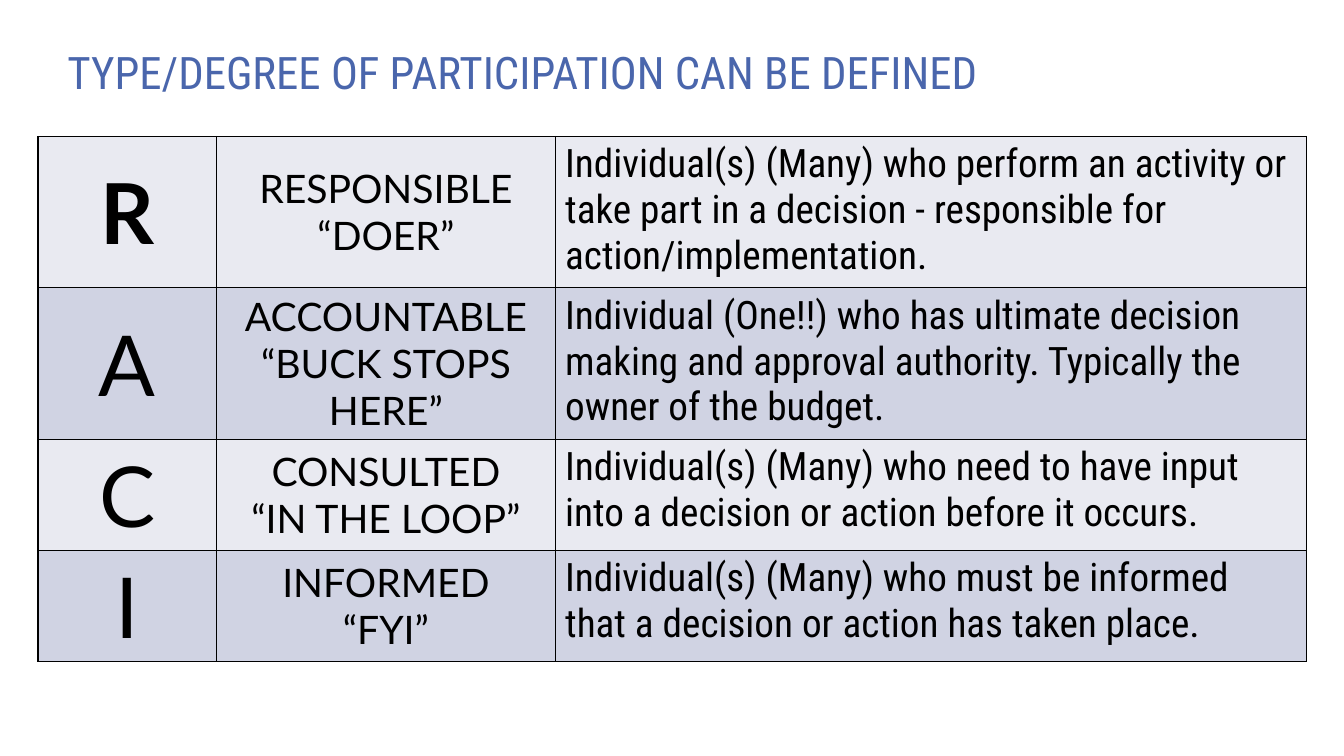
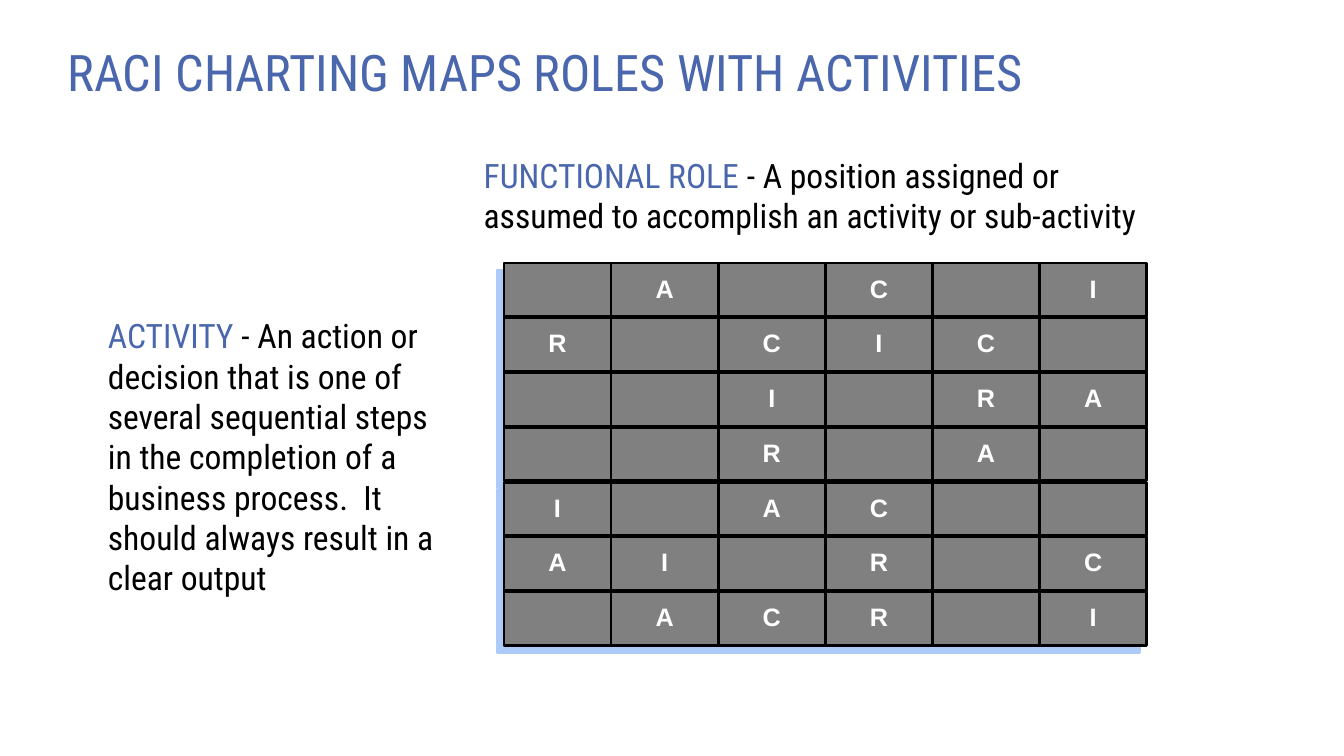
from lxml import etree
from pptx import Presentation
from pptx.dml.color import RGBColor
from pptx.enum.shapes import MSO_SHAPE as Shape
from pptx.enum.text import MSO_ANCHOR as Anchor, PP_ALIGN as Align
from pptx.oxml.ns import qn
from pptx.util import Cm, Pt

# Shared look
BLUE = RGBColor(0x4A, 0x66, 0xAC)
BLACK = RGBColor(0x00, 0x00, 0x00)
WHITE = RGBColor(0xFF, 0xFF, 0xFF)
GRAY = RGBColor(0x80, 0x80, 0x80)
SHADOW = RGBColor(0xAC, 0xCB, 0xF9)
BANDS = (RGBColor(0xE9, 0xEA, 0xF1), RGBColor(0xD0, 0xD3, 0xE3))
BODY_FONT = "Roboto Condensed"
LABEL_FONT = "Lato"
GRID_FONT = "Arial"

# Participation table: letter, role, meaning, row height in cm
PARTICIPATION = (
    ("R", "RESPONSIBLE\n“DOER”",
     "Individual(s) (Many) who perform an activity or take part in a decision"
     " - responsible for action/implementation.", 3.8),
    ("A", "ACCOUNTABLE\n“BUCK STOPS HERE”",
     "Individual (One!!) who has ultimate decision making and approval"
     " authority. Typically the owner of the budget.", 3.8),
    ("C", "CONSULTED\n“IN THE LOOP”",
     "Individual(s) (Many) who need to have input into a decision or action"
     " before it occurs.", 2.8),
    ("I", "INFORMED\n“FYI”",
     "Individual(s) (Many) who must be informed that a decision or action"
     " has taken place.", 2.8),
)
COLUMN_WIDTHS = (4.5, 8.53, 18.93)

# RACI grid: one string per activity, one letter per role, "." for none
RACI_ROWS = (".A.C.I", "R.CIC.", "..I.RA", "..R.A.", "I.AC..", "AI.R.C", ".ACR.I")
GRID_LEFT, GRID_TOP = 12.7, 6.63
COLUMN_STEP, ROW_STEP = 2.7, 1.38
CELL_HEIGHT = 1.35


def set_font(para, name, size, color, bold=False):
    font = para.font
    font.name, font.size, font.bold = name, Pt(size), bold
    font.color.rgb = color


def add_text_box(page, left, top, width, height):
    box = page.shapes.add_textbox(Cm(left), Cm(top), Cm(width), Cm(height))
    box.text_frame.word_wrap = True
    return box.text_frame


def add_title(page, text, size):
    frame = add_text_box(page, 1.7, 1.07, 30.48, 1.65)
    frame.margin_left = frame.margin_right = 0
    frame.margin_top = frame.margin_bottom = 0
    frame.vertical_anchor = Anchor.MIDDLE
    para = frame.paragraphs[0]
    para.text = text
    para.line_spacing = 0.9
    set_font(para, BODY_FONT, size, BLUE)


def add_definition(page, term, meaning, left, top, width, height):
    frame = add_text_box(page, left, top, width, height)
    frame.margin_left = Cm(0.56)
    para = frame.paragraphs[0]
    set_font(para, BODY_FONT, 24, BLACK)
    span = para.add_run()
    span.text = term
    span.font.color.rgb = BLUE
    para.add_run().text = meaning


def add_borders(cell):
    properties = cell._tc.get_or_add_tcPr()
    for side in ("a:lnL", "a:lnR", "a:lnT", "a:lnB"):
        line = etree.SubElement(properties, qn(side), w=str(Pt(1)))
        fill = etree.SubElement(line, qn("a:solidFill"))
        etree.SubElement(fill, qn("a:srgbClr"), val=str(BLACK))


def fill_cell(cell, text, band, font, size, bold=False, centered=True):
    add_borders(cell)
    cell.fill.solid()
    cell.fill.fore_color.rgb = band
    cell.vertical_anchor = Anchor.MIDDLE if centered else Anchor.TOP
    cell.text_frame.text = text
    for para in cell.text_frame.paragraphs:
        para.alignment = Align.CENTER if centered else Align.LEFT
        set_font(para, font, size, BLACK, bold)


def add_participation_table(page):
    heights = [row[-1] for row in PARTICIPATION]
    table = page.shapes.add_table(
        len(PARTICIPATION), len(COLUMN_WIDTHS), Cm(0.96), Cm(3.44),
        Cm(sum(COLUMN_WIDTHS)), Cm(sum(heights))).table
    table.first_row = table.horz_banding = False
    for column, width in zip(table.columns, COLUMN_WIDTHS):
        column.width = Cm(width)
    for index, (letter, role, meaning, height) in enumerate(PARTICIPATION):
        row = table.rows[index]
        row.height = Cm(height)
        band = BANDS[index % 2]
        fill_cell(row.cells[0], letter, band, LABEL_FONT, 60, bold=index == 0)
        fill_cell(row.cells[1], role, band, LABEL_FONT, 28)
        fill_cell(row.cells[2], meaning, band, BODY_FONT, 28, centered=False)


def add_shadow(box):
    box.shadow.inherit = False
    effects = box._element.spPr.find(qn("a:effectLst"))
    shadow = etree.SubElement(effects, qn("a:outerShdw"), blurRad="0",
                              dist=str(Pt(7.1)), dir=str(135 * 60000),
                              algn="ctr", rotWithShape="0")
    etree.SubElement(shadow, qn("a:srgbClr"), val=str(SHADOW))


def add_grid_cell(page, letter, left, top):
    box = page.shapes.add_shape(Shape.RECTANGLE, Cm(left), Cm(top),
                                Cm(COLUMN_STEP), Cm(CELL_HEIGHT))
    box.fill.solid()
    box.fill.fore_color.rgb = GRAY
    box.line.color.rgb = BLACK
    box.line.width = Pt(2)
    add_shadow(box)
    if letter != ".":
        frame = box.text_frame
        frame.word_wrap = False
        frame.vertical_anchor = Anchor.MIDDLE
        para = frame.paragraphs[0]
        para.text = letter
        para.alignment = Align.CENTER
        para.line_spacing = 0.9
        set_font(para, GRID_FONT, 18, WHITE, bold=True)


def add_raci_grid(page):
    # Right to left, so that each cell covers its neighbour's shadow
    for row, letters in enumerate(RACI_ROWS):
        for column, letter in reversed(list(enumerate(letters))):
            add_grid_cell(page, letter, GRID_LEFT + column * COLUMN_STEP,
                          GRID_TOP + row * ROW_STEP)


def main():
    deck = Presentation()
    deck.slide_width, deck.slide_height = Cm(33.87), Cm(19.05)
    blank = deck.slide_layouts[6]

    # Types of participation
    page = deck.slides.add_slide(blank)
    add_title(page, "TYPE/DEGREE OF PARTICIPATION CAN BE DEFINED", 32)
    add_participation_table(page)

    # Roles against activities
    page = deck.slides.add_slide(blank)
    add_raci_grid(page)
    add_title(page, "RACI CHARTING MAPS ROLES WITH ACTIVITIES", 36)
    add_definition(
        page, "FUNCTIONAL ROLE ",
        "- A position assigned or assumed to accomplish an activity or sub-activity",
        11.63, 3.78, 18.31, 2.31)
    add_definition(
        page, "ACTIVITY ",
        "- An action or decision that is one of several sequential steps in the"
        " completion of a business process.  It should always result in a clear output",
        2.16, 7.82, 9.47, 7.44)

    deck.save("out.pptx")


if __name__ == "__main__":
    main()
